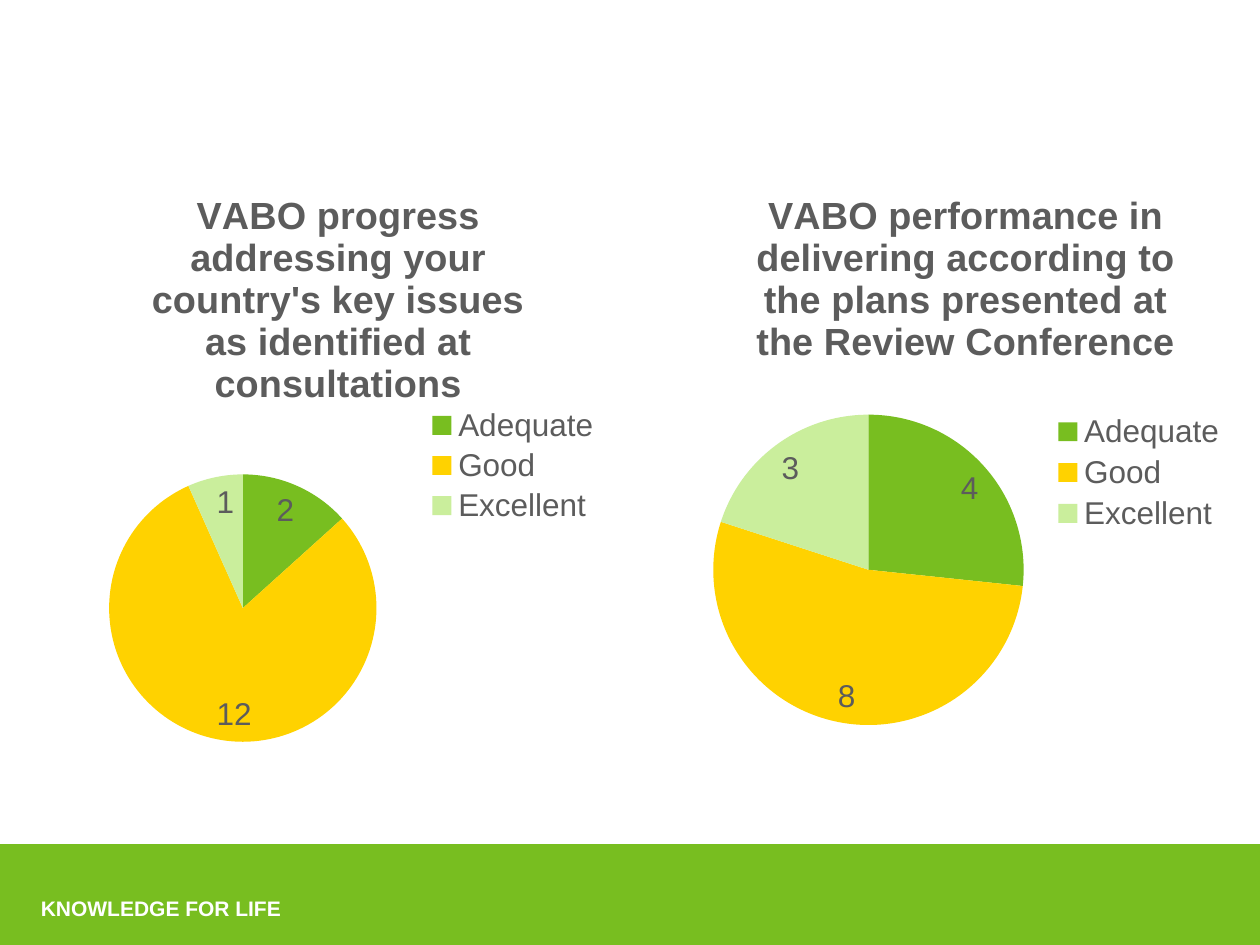
"""Build a slide with two survey pie charts above a green footer band."""
from lxml.etree import SubElement
from pptx import Presentation
from pptx.chart.data import CategoryChartData
from pptx.dml.color import RGBColor
from pptx.enum.chart import XL_CHART_TYPE, XL_LABEL_POSITION, XL_LEGEND_POSITION
from pptx.enum.shapes import MSO_SHAPE
from pptx.enum.text import PP_ALIGN
from pptx.oxml.ns import qn
from pptx.util import Cm, Pt

COLORS = {"green": "78BE20", "yellow": "FFD200", "pale": "CAEE9C", "gray": "5C5C5C", "white": "FFFFFF"}
FONT = "Arial"
FOOTER = "KNOWLEDGE FOR LIFE"
CATEGORIES = ["Adequate", "Good ", "Excellent"]
SLICES = ["green", "yellow", "pale"]
PIES = [
    {
        "title": "VABO progress addressing your country's key issues as identified at consultations",
        "values": [2, 12, 1],
        "frame": (1.32, 3.33, 11, 11.99),
        "plot": (0.08, 0.52, 0.49, 0.45),
        "legend": (0.66, 0.4, 0.32, 0.21),
    },
    {
        "title": "VABO performance in delivering according to the plans presented at the Review Conference",
        "values": [4, 8, 3],
        "frame": (14.02, 3.33, 10.9, 12.27),
        "plot": (0.03, 0.41, 0.58, 0.51),
        "legend": (0.66, 0.4, 0.32, 0.21),
    },
]


def color(name):
    return RGBColor.from_string(COLORS[name])


def style(font, size, name, bold=False):
    font.name, font.size, font.bold = FONT, Pt(size), bold
    font.color.rgb = color(name)


def place(part, bounds, inner=False):
    layout = part.find(qn("c:layout"))
    if layout is None:
        layout = SubElement(part, qn("c:layout"))
        part.find(qn("c:legendPos")).addnext(layout)
    for child in list(layout):
        layout.remove(child)
    manual = SubElement(layout, qn("c:manualLayout"))
    settings = [("layoutTarget", "inner")] if inner else []
    settings += [("xMode", "edge"), ("yMode", "edge"), *zip("xywh", bounds)]
    for tag, value in settings:
        SubElement(manual, qn(f"c:{tag}")).set("val", str(value))


def add_pie(page, pie):
    data = CategoryChartData()
    data.categories = CATEGORIES
    data.add_series(pie["title"], pie["values"])
    chart = page.shapes.add_chart(XL_CHART_TYPE.PIE, *map(Cm, pie["frame"]), data).chart
    style(chart.font, 18, "gray")
    chart.has_title = True
    chart.chart_title.text_frame.text = pie["title"]
    style(chart.chart_title.text_frame.paragraphs[0].runs[0].font, 21.6, "gray", True)
    chart.chart_title.include_in_layout = False

    chart.has_legend = True
    chart.legend.position = XL_LEGEND_POSITION.RIGHT
    chart.legend.include_in_layout = False
    style(chart.legend.font, 18, "gray")
    place(chart.legend._element, pie["legend"])

    plot = chart.plots[0]
    plot.vary_by_categories = True
    plot.has_data_labels = True
    plot.data_labels.show_value = True
    plot.data_labels.show_percentage = False
    plot.data_labels.position = XL_LABEL_POSITION.INSIDE_END
    style(plot.data_labels.font, 18, "gray")
    for index, name in enumerate(SLICES):
        fill = plot.series[0].points[index].format.fill
        fill.solid()
        fill.fore_color.rgb = color(name)
    area = chart._chartSpace.chart.plotArea
    if area.find(qn("c:layout")) is None:
        area.insert(0, area.makeelement(qn("c:layout")))
    place(area, pie["plot"], inner=True)


def add_footer(page):
    band = page.shapes.add_shape(MSO_SHAPE.RECTANGLE, 0, Cm(17.02), Cm(25.4), Cm(2.1))
    band.shadow.inherit = False
    band.fill.solid()
    band.fill.fore_color.rgb = color("green")
    band.line.fill.background()
    box = page.shapes.add_textbox(Cm(0.51), Cm(17.93), Cm(5.41), Cm(0.76))
    box.text_frame.word_wrap = False
    paragraph = box.text_frame.paragraphs[0]
    paragraph.text = FOOTER
    paragraph.alignment = PP_ALIGN.RIGHT
    paragraph.space_after = Pt(3)
    style(paragraph.runs[0].font, 12, "white", True)


def main():
    deck = Presentation()
    deck.slide_width, deck.slide_height = Cm(25.4), Cm(19.05)
    page = deck.slides.add_slide(deck.slide_layouts[6])
    add_footer(page)
    for pie in PIES:
        add_pie(page, pie)
    deck.save("out.pptx")


if __name__ == "__main__":
    main()
